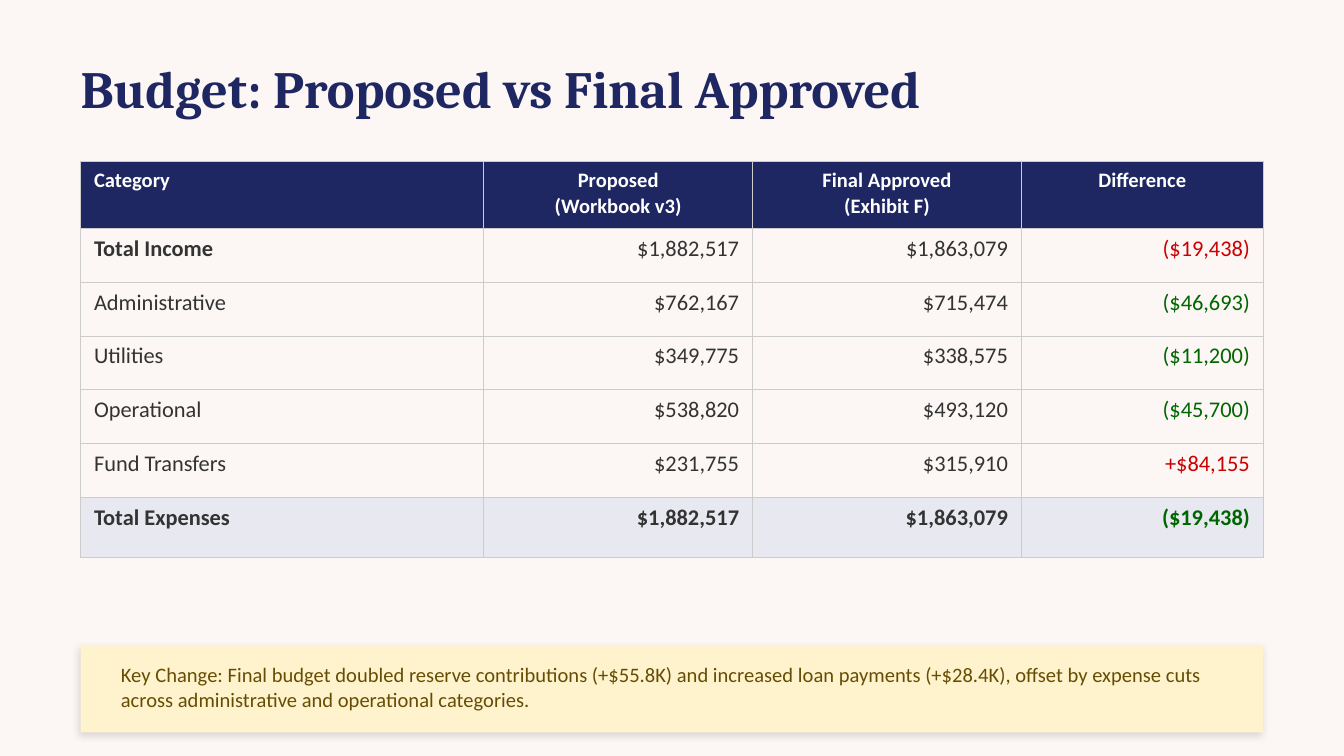
from typing import NamedTuple

from lxml.etree import SubElement
from pptx import Presentation
from pptx.dml.color import RGBColor
from pptx.enum.shapes import MSO_SHAPE
from pptx.enum.text import MSO_ANCHOR, PP_ALIGN
from pptx.oxml.ns import qn
from pptx.util import Inches, Pt

NAVY = RGBColor(0x1E, 0x27, 0x61)
CREAM = RGBColor(0xFC, 0xF6, 0xF5)
WHITE = RGBColor(0xFF, 0xFF, 0xFF)
INK = RGBColor(0x33, 0x33, 0x33)
RED = RGBColor(0xCC, 0x00, 0x00)
GREEN = RGBColor(0x00, 0x66, 0x00)
GRID = RGBColor(0xCC, 0xCC, 0xCC)
LAVENDER = RGBColor(0xE8, 0xE8, 0xF0)
YELLOW = RGBColor(0xFF, 0xF3, 0xCD)
BROWN = RGBColor(0x66, 0x4D, 0x03)
BLACK = RGBColor(0x00, 0x00, 0x00)

LEFT, WIDTH = 0.6, 8.8


class TextStyle(NamedTuple):
    size: float
    color: RGBColor
    bold: bool = False
    font: str = "Calibri"
    align: PP_ALIGN = PP_ALIGN.LEFT


class BudgetLine(NamedTuple):
    category: str
    proposed: str
    approved: str
    difference: str
    difference_color: RGBColor
    bold_category: bool = False
    bold_amounts: bool = False
    fill: RGBColor | None = None
    height: float = 0.4


HEADINGS = ("Category", "Proposed\n(Workbook v3)", "Final Approved\n(Exhibit F)", "Difference")
COLUMN_WIDTHS = (3, 2, 2, 1.8)
HEADER_HEIGHT = 0.5
BUDGET = (
    BudgetLine("Total Income", "$1,882,517", "$1,863,079", "($19,438)", RED, bold_category=True),
    BudgetLine("Administrative", "$762,167", "$715,474", "($46,693)", GREEN),
    BudgetLine("Utilities", "$349,775", "$338,575", "($11,200)", GREEN),
    BudgetLine("Operational", "$538,820", "$493,120", "($45,700)", GREEN),
    BudgetLine("Fund Transfers", "$231,755", "$315,910", "+$84,155", RED),
    BudgetLine("Total Expenses", "$1,882,517", "$1,863,079", "($19,438)", GREEN,
               True, True, LAVENDER, 0.45),
)


def write(frame, text: str, style: TextStyle) -> None:
    frame.text = text
    for paragraph in frame.paragraphs:
        paragraph.alignment = style.align
        font = paragraph.font
        font.name, font.size, font.bold = style.font, Pt(style.size), style.bold
        font.color.rgb = style.color


def add_text(slide, left: float, top: float, width: float, height: float,
             text: str, style: TextStyle) -> None:
    frame = slide.shapes.add_textbox(
        Inches(left), Inches(top), Inches(width), Inches(height)).text_frame
    frame.word_wrap = True
    frame.vertical_anchor = MSO_ANCHOR.MIDDLE
    frame.margin_left = frame.margin_right = frame.margin_top = frame.margin_bottom = 0
    write(frame, text, style)


def add_color(parent, color: RGBColor):
    return SubElement(parent, qn("a:srgbClr"), val=str(color))


def fill_cell(cell, text: str, style: TextStyle, fill: RGBColor | None) -> None:
    write(cell.text_frame, text, style)
    properties = cell._tc.get_or_add_tcPr()
    for side in ("lnL", "lnR", "lnT", "lnB"):
        border = SubElement(properties, qn(f"a:{side}"), w=str(Pt(0.5)))
        add_color(SubElement(border, qn("a:solidFill")), GRID)
    if fill is None:
        cell.fill.background()
    else:
        cell.fill.solid()
        cell.fill.fore_color.rgb = fill


def add_budget_table(slide) -> None:
    heights = [HEADER_HEIGHT] + [line.height for line in BUDGET]
    table = slide.shapes.add_table(
        len(heights), len(COLUMN_WIDTHS), Inches(LEFT), Inches(1.2),
        Inches(WIDTH), Inches(sum(heights))).table
    table.first_row = table.horz_banding = False
    for column, width in zip(table.columns, COLUMN_WIDTHS):
        column.width = Inches(width)
    for row, height in zip(table.rows, heights):
        row.height = Inches(height)

    # Header row
    for index, heading in enumerate(HEADINGS):
        align = PP_ALIGN.CENTER if index else PP_ALIGN.LEFT
        fill_cell(table.cell(0, index), heading, TextStyle(11, WHITE, True, align=align), NAVY)

    # Budget rows
    for row_index, line in enumerate(BUDGET, start=1):
        amount = TextStyle(12, INK, line.bold_amounts, align=PP_ALIGN.RIGHT)
        entries = (
            (line.category, TextStyle(12, INK, line.bold_category)),
            (line.proposed, amount),
            (line.approved, amount),
            (line.difference, amount._replace(color=line.difference_color)),
        )
        for index, (text, style) in enumerate(entries):
            fill_cell(table.cell(row_index, index), text, style, line.fill)


def add_key_change(slide) -> None:
    banner = slide.shapes.add_shape(
        MSO_SHAPE.RECTANGLE, Inches(LEFT), Inches(4.8), Inches(WIDTH), Inches(0.65))
    banner.fill.solid()
    banner.fill.fore_color.rgb = YELLOW
    banner.line.fill.background()

    # Soft shadow: 4 pt blur, 2 pt offset at 135 degrees, 12 % opaque
    banner.shadow.inherit = False
    effects = banner._element.spPr.find(qn("a:effectLst"))
    shadow = SubElement(effects, qn("a:outerShdw"), blurRad=str(Pt(4)), dist=str(Pt(2)),
                        dir=str(135 * 60000), algn="bl", rotWithShape="0")
    SubElement(add_color(shadow, BLACK), qn("a:alpha"), val="12000")

    add_text(slide, 0.9, 4.82, 8.2, 0.58,
             "Key Change: Final budget doubled reserve contributions (+$55.8K) and increased "
             "loan payments (+$28.4K), offset by expense cuts across administrative and "
             "operational categories.", TextStyle(11, BROWN))


def main() -> None:
    # Widescreen 16:9 slide
    presentation = Presentation()
    presentation.slide_width = Inches(10)
    presentation.slide_height = Inches(10 * 9 / 16)
    slide = presentation.slides.add_slide(presentation.slide_layouts[6])
    slide.background.fill.solid()
    slide.background.fill.fore_color.rgb = CREAM

    add_text(slide, LEFT, 0.3, WIDTH, 0.7, "Budget: Proposed vs Final Approved",
             TextStyle(28, NAVY, True, "Cambria"))
    add_budget_table(slide)
    add_key_change(slide)
    presentation.save("out.pptx")


if __name__ == "__main__":
    main()
